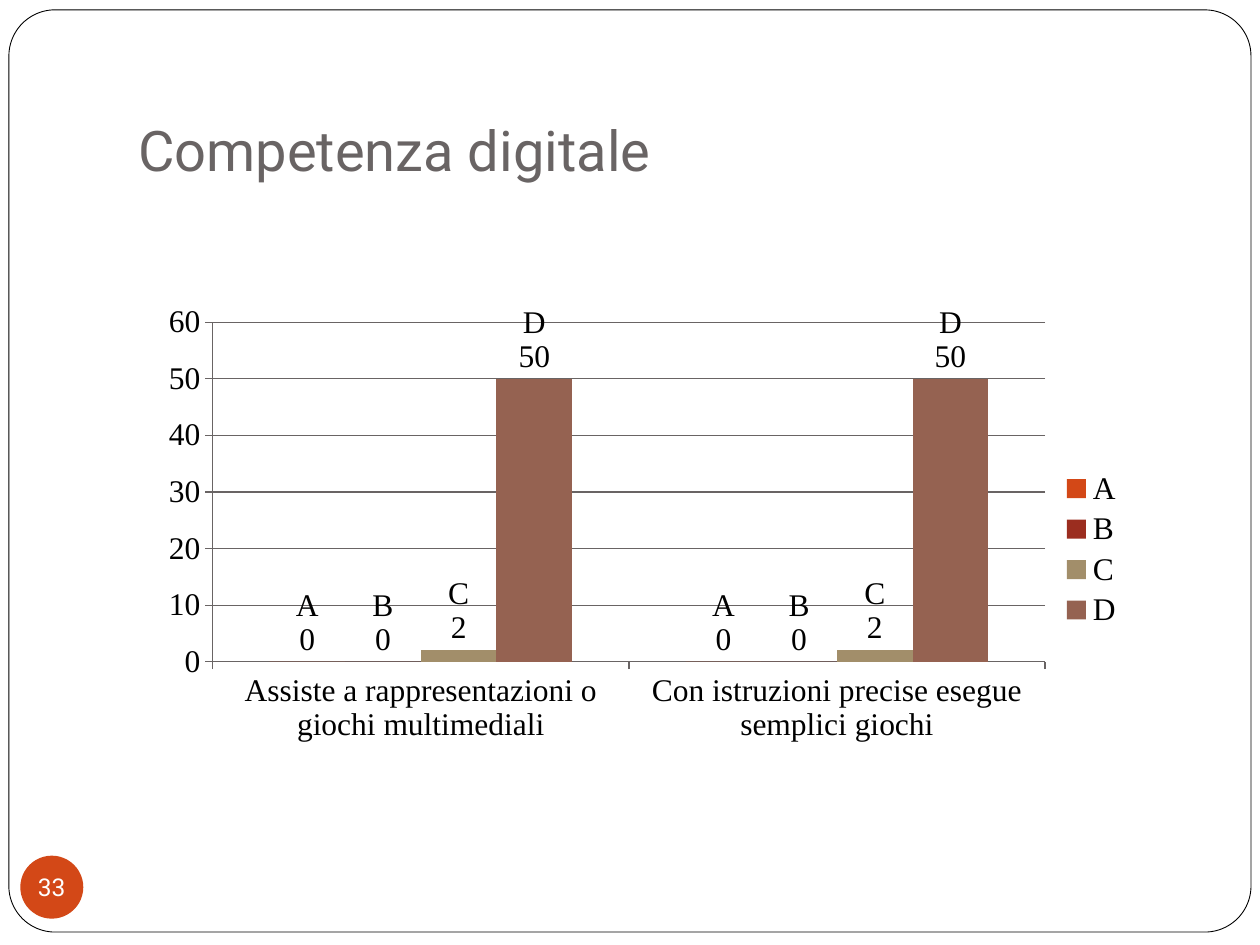
from lxml import etree
from pptx import Presentation
from pptx import util as u
from pptx.chart.data import CategoryChartData
from pptx.dml.color import RGBColor
from pptx.enum import chart as chart_enum, shapes, text
from pptx.oxml.ns import qn

WHITE = RGBColor(0xFF, 0xFF, 0xFF)
BLACK = RGBColor(0x00, 0x00, 0x00)
GRAY = RGBColor(0x69, 0x64, 0x64)
ORANGE = RGBColor(0xD3, 0x48, 0x17)
RED = RGBColor(0x9B, 0x2D, 0x1F)
SAND = RGBColor(0xA2, 0x8E, 0x6A)
BROWN = RGBColor(0x95, 0x62, 0x51)

CATEGORIES = [
    "Assiste a rappresentazioni o giochi multimediali",
    "Con istruzioni precise esegue semplici giochi",
]
SERIES = [
    ("A", (0, 0), ORANGE),
    ("B", (0, 0), RED),
    ("C", (2, 2), SAND),
    ("D", (50, 50), BROWN),
]
PLOT_LAYOUT = {"x": 0.06, "y": 0.056, "w": 0.847, "h": 0.664}


def add_run(paragraph, content, size, color):
    run = paragraph.add_run()
    run.text = content
    run.font.name = "Roboto"
    run.font.size = u.Pt(size)
    run.font.color.rgb = color


def add_filled_shape(slide, kind, box, fill):
    shape = slide.shapes.add_shape(kind, *map(u.Cm, box))
    shape.shadow.inherit = False
    shape.fill.solid()
    shape.fill.fore_color.rgb = fill
    shape.line.fill.background()
    return shape


def add_frame(slide):
    frame = add_filled_shape(
        slide, shapes.MSO_SHAPE.ROUNDED_RECTANGLE, (0.18, 0.2, 25.04, 18.59), WHITE
    )
    frame.adjustments[0] = 0.05
    frame.line.color.rgb = BLACK
    frame.line.width = u.Pt(0.5)


def add_title(slide, content):
    title = slide.shapes.add_textbox(u.Cm(2.54), u.Cm(0.76), u.Cm(21.59), u.Cm(3.18))
    text_frame = title.text_frame
    text_frame.word_wrap = True
    text_frame.vertical_anchor = text.MSO_ANCHOR.BOTTOM
    text_frame.margin_bottom = u.Cm(0.25)
    add_run(text_frame.paragraphs[0], content, 32, GRAY)


def add_page_number(slide, number):
    badge = add_filled_shape(
        slide, shapes.MSO_SHAPE.OVAL, (0.41, 17.25, 1.27, 1.27), ORANGE
    )
    text_frame = badge.text_frame
    text_frame.word_wrap = False
    text_frame.vertical_anchor = text.MSO_ANCHOR.MIDDLE
    text_frame.margin_left = text_frame.margin_right = 0
    text_frame.margin_top = text_frame.margin_bottom = 0
    paragraph = text_frame.paragraphs[0]
    paragraph.alignment = text.PP_ALIGN.CENTER
    add_run(paragraph, number, 14, WHITE)


def place_plot(chart):
    plot_area = chart.plots[0]._element.getparent()
    for layout in plot_area.findall(qn("c:layout")):
        plot_area.remove(layout)
    layout = etree.Element(qn("c:layout"))
    plot_area.insert(0, layout)
    manual = etree.SubElement(layout, qn("c:manualLayout"))
    settings = [("layoutTarget", "inner"), ("xMode", "edge"), ("yMode", "edge")]
    for name, value in settings + list(PLOT_LAYOUT.items()):
        etree.SubElement(manual, qn(f"c:{name}")).set("val", str(value))


def style_axis(axis):
    axis.major_tick_mark = chart_enum.XL_TICK_MARK.OUTSIDE
    axis.minor_tick_mark = chart_enum.XL_TICK_MARK.NONE
    axis.format.line.color.rgb = GRAY
    axis.format.line.width = u.Pt(0.75)


def style_series(series, color):
    series.format.fill.solid()
    series.format.fill.fore_color.rgb = color
    series.invert_if_negative = False
    labels = series.data_labels
    labels.show_value = True
    labels.show_series_name = True
    labels.position = chart_enum.XL_LABEL_POSITION.OUTSIDE_END
    separator = etree.Element(qn("c:separator"))
    separator.text = "\n"
    labels._element.find(qn("c:showBubbleSize")).addnext(separator)


def add_column_chart(slide):
    data = CategoryChartData()
    data.categories = CATEGORIES
    for name, values, _ in SERIES:
        data.add_series(name, values)
    chart = slide.shapes.add_chart(
        chart_enum.XL_CHART_TYPE.COLUMN_CLUSTERED,
        u.Cm(3.1), u.Cm(5.92), u.Cm(19.81), u.Cm(10.31), data,
    ).chart
    chart.has_title = False
    chart.font.name = "Times New Roman"
    chart.font.size = u.Pt(18)
    chart.font.color.rgb = BLACK
    chart.has_legend = True
    chart.legend.position = chart_enum.XL_LEGEND_POSITION.RIGHT
    chart.legend.include_in_layout = False

    style_axis(chart.category_axis)
    value_axis = chart.value_axis
    style_axis(value_axis)
    value_axis.minimum_scale = 0
    value_axis.maximum_scale = 60
    value_axis.major_unit = 10
    value_axis.has_major_gridlines = True
    gridline = value_axis.major_gridlines.format.line
    gridline.color.rgb = GRAY
    gridline.width = u.Pt(0.75)

    plot = chart.plots[0]
    plot.gap_width = 150
    plot.overlap = 0
    plot.vary_by_categories = False
    for series, (_, _, color) in zip(plot.series, SERIES):
        style_series(series, color)
    place_plot(chart)


def main():
    presentation = Presentation()
    presentation.slide_width = u.Cm(25.4)
    presentation.slide_height = u.Cm(19.05)
    slide = presentation.slides.add_slide(presentation.slide_layouts[6])
    add_frame(slide)
    add_title(slide, "Competenza digitale")
    add_page_number(slide, "33")
    add_column_chart(slide)
    presentation.save("out.pptx")


if __name__ == "__main__":
    main()
